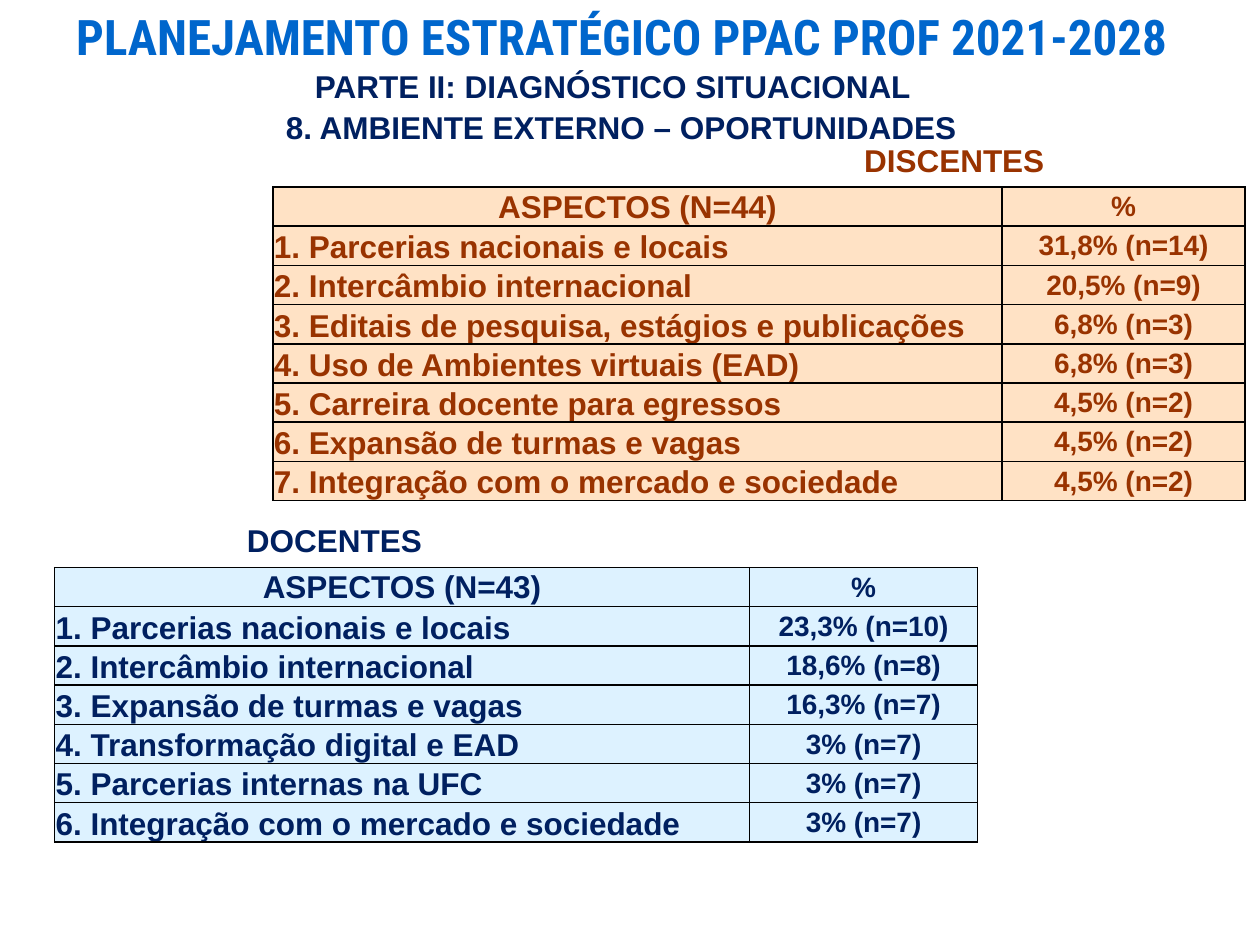
from lxml.etree import SubElement
from pptx import Presentation
from pptx.dml.color import RGBColor
from pptx.enum.text import MSO_ANCHOR, PP_ALIGN
from pptx.oxml import parse_xml
from pptx.oxml.ns import nsdecls, qn
from pptx.util import Cm, Pt

BRIGHT_BLUE = RGBColor(0x00, 0x66, 0xCC)
NAVY = RGBColor(0x00, 0x20, 0x60)
BROWN = RGBColor(0x99, 0x33, 0x00)
PEACH = RGBColor(0xFF, 0xE2, 0xC5)
PALE_BLUE = RGBColor(0xDD, 0xF2, 0xFF)
ROW_HEIGHT = Cm(0.79)


def style_text(frame, text, size, color, align, font="Arial"):
    frame.text = text
    paragraph = frame.paragraphs[0]
    paragraph.alignment = align
    run = paragraph.runs[0]
    run.font.name = font
    run.font.size = Pt(size)
    run.font.bold = True
    run.font.color.rgb = color
    return run


def add_border(cell):
    """Draw a thin black line on all four sides of a cell."""
    properties = cell._tc.get_or_add_tcPr()
    for position, side in enumerate(("lnL", "lnR", "lnT", "lnB")):
        properties.insert(position, parse_xml(
            f'<a:{side} {nsdecls("a")} w="12700"><a:solidFill>'
            f'<a:srgbClr val="000000"/></a:solidFill></a:{side}>'))


presentation = Presentation()
presentation.slide_width = Cm(25.4)
presentation.slide_height = Cm(19.05)
slide = presentation.slides.add_slide(presentation.slide_layouts[6])

# Headings: text, left, top, width, height, size, colour, alignment, font, wrap
headings = [
    ("PLANEJAMENTO ESTRATÉGICO PPAC PROF 2021-2028", 1.03, 0, 23, 1.2,
     28, BRIGHT_BLUE, PP_ALIGN.CENTER, "Roboto Condensed", False),
    ("PARTE II: DIAGNÓSTICO SITUACIONAL", 6.1, 1.22, 12.65, 1.02,
     18, NAVY, PP_ALIGN.LEFT, "Arial", False),
    ("DISCENTES", 17.17, 2.72, 4.19, 1.02,
     18, BROWN, PP_ALIGN.LEFT, "Arial", False),
    ("8. AMBIENTE EXTERNO – OPORTUNIDADES", 3.38, 2.06, 18.29, 1.02,
     18, NAVY, PP_ALIGN.CENTER, "Arial", True),
    ("DOCENTES", 4.73, 10.37, 4.06, 1.02,
     18, NAVY, PP_ALIGN.LEFT, "Arial", False),
]
heading_runs = []
for text, left, top, width, height, size, color, align, font, wrap in headings:
    box = slide.shapes.add_textbox(Cm(left), Cm(top), Cm(width), Cm(height))
    box.text_frame.word_wrap = wrap
    heading_runs.append(
        style_text(box.text_frame, text, size, color, align, font))

# Light blue outline around the title letters
title_properties = heading_runs[0].font._element
outline = SubElement(title_properties, qn("a:ln"), w=str(Pt(1.5)))
outline_fill = SubElement(outline, qn("a:solidFill"))
SubElement(outline_fill, qn("a:srgbClr"), val="99CCFF")
title_properties.insert(0, outline)

student_rows = [
    ("ASPECTOS (N=44)", "%"),
    ("1. Parcerias nacionais e locais", "31,8% (n=14)"),
    ("2. Intercâmbio internacional", "20,5% (n=9)"),
    ("3. Editais de pesquisa, estágios e publicações", "6,8% (n=3)"),
    ("4. Uso de Ambientes virtuais (EAD)", "6,8% (n=3)"),
    ("5. Carreira docente para egressos", "4,5% (n=2)"),
    ("6. Expansão de turmas e vagas", "4,5% (n=2)"),
    ("7. Integração com o mercado e sociedade", "4,5% (n=2)"),
]
teacher_rows = [
    ("ASPECTOS (N=43)", "%"),
    ("1. Parcerias nacionais e locais", "23,3% (n=10)"),
    ("2. Intercâmbio internacional", "18,6% (n=8)"),
    ("3. Expansão de turmas e vagas", "16,3% (n=7)"),
    ("4. Transformação digital e EAD", "3% (n=7)"),
    ("5. Parcerias internas na UFC", "3% (n=7)"),
    ("6. Integração com o mercado e sociedade", "3% (n=7)"),
]
surveys = [
    (student_rows, 5.5, 3.77, (14.7, 4.9), BROWN, PEACH),
    (teacher_rows, 1.1, 11.44, (14.01, 4.6), NAVY, PALE_BLUE),
]
for rows, left, top, widths, color, fill in surveys:
    table = slide.shapes.add_table(
        len(rows), 2, Cm(left), Cm(top),
        Cm(sum(widths)), ROW_HEIGHT * len(rows)).table
    table.first_row = False
    table.horz_banding = False
    for column, width in zip(table.columns, widths):
        column.width = Cm(width)
    for row_index, row in enumerate(rows):
        for column_index, text in enumerate(row):
            cell = table.cell(row_index, column_index)
            is_aspect = row_index > 0 and column_index == 0
            style_text(cell.text_frame, text, 16 if column_index else 18, color,
                       PP_ALIGN.LEFT if is_aspect else PP_ALIGN.CENTER)
            cell.vertical_anchor = (
                MSO_ANCHOR.BOTTOM if is_aspect else MSO_ANCHOR.MIDDLE)
            cell.margin_left = cell.margin_right = cell.margin_top = Cm(0.02)
            cell.margin_bottom = 0
            cell.fill.solid()
            cell.fill.fore_color.rgb = fill
            add_border(cell)

presentation.save("out.pptx")
